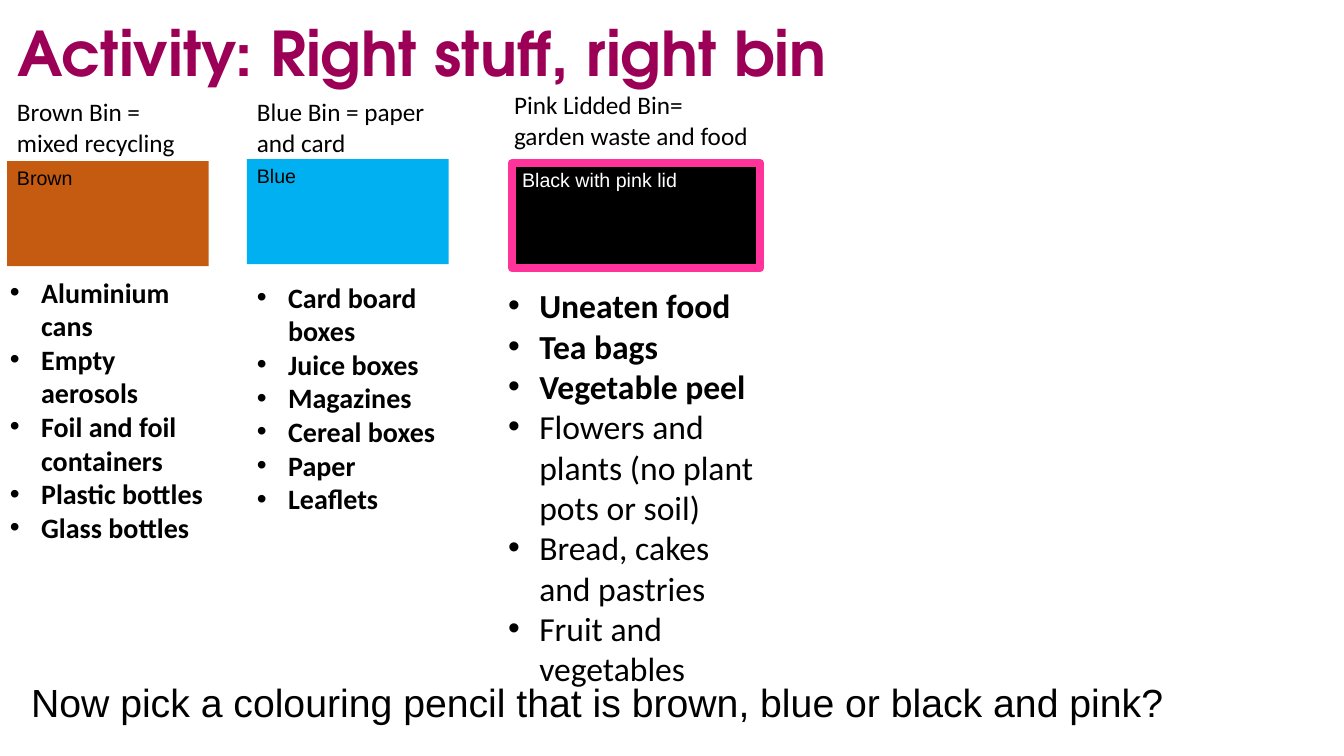
from lxml import etree
from pptx import Presentation
from pptx.dml.color import RGBColor
from pptx.enum.shapes import MSO_SHAPE
from pptx.enum.text import MSO_ANCHOR, PP_ALIGN
from pptx.oxml.ns import qn
from pptx.util import Inches, Pt

RECTANGLE = MSO_SHAPE.RECTANGLE
TOP, MIDDLE = MSO_ANCHOR.TOP, MSO_ANCHOR.MIDDLE
LEFT = PP_ALIGN.LEFT

COLOURS = {
    "title": "9B0056",
    "black": "000000",
    "white": "FFFFFF",
    "brown": "C55A11",
    "blue": "00B0F0",
    "pink": "FF3399",
}

BINS = [
    {
        "heading": ("Brown Bin = mixed recycling", (0.07, 0.91, 2, 1.01)),
        "swatch": ("Brown", (0.07, 1.6, 2, 1.04)),
        "swatch_format": {"fill": "brown"},
        "list_box": (0, 2.68, 2.14, 2.79),
        "size": 20,
        "bold_items": ["Aluminium cans", "Empty aerosols", "Foil and foil containers",
                       "Plastic bottles", "Glass bottles"],
        "plain_items": [],
    },
    {
        "heading": ("Blue Bin = paper and card", (2.45, 0.91, 2, 1.01)),
        "swatch": ("Blue", (2.45, 1.58, 2, 1.04)),
        "swatch_format": {"fill": "blue"},
        "list_box": (2.45, 2.73, 2, 2.46),
        "size": 20,
        "bold_items": ["Card board boxes", "Juice boxes", "Magazines",
                       "Cereal boxes", "Paper", "Leaflets"],
        "plain_items": [],
    },
    {
        "heading": ("Pink Lidded Bin= garden waste and food", (5, 0.84, 2.62, 1.01)),
        "swatch": ("Black with pink lid", (5.08, 1.62, 2.46, 1.04)),
        "swatch_format": {"fill": "black", "outline": "pink", "colour": "white"},
        "list_box": (4.94, 2.78, 2.75, 4.78),
        "size": 24,
        "bold_items": ["Uneaten food", "Tea bags", "Vegetable peel"],
        "plain_items": ["Flowers and plants (no plant pots or soil)",
                        "Bread, cakes and pastries", "Fruit and vegetables"],
    },
]


def colour_of(name):
    return RGBColor.from_string(COLOURS[name])


def add_bullet(paragraph):
    properties = paragraph._p.get_or_add_pPr()
    properties.set("marL", str(Inches(0.31)))
    properties.set("indent", str(Inches(-0.31)))
    etree.SubElement(properties, qn("a:buFont"), typeface="Arial")
    etree.SubElement(properties, qn("a:buChar"), char="•")


def write_text(paragraph, text, size=18, font="Calibri", colour="black", bold=False,
               bullet=False):
    if bullet:
        add_bullet(paragraph)
    paragraph.alignment = LEFT
    run = paragraph.add_run()
    run.text = text
    run.font.size = Pt(size)
    run.font.name = font
    run.font.bold = bold
    run.font.color.rgb = colour_of(colour)


def add_title(slide, text):
    title = slide.shapes.title
    title.left, title.top, title.width, title.height = map(Inches, (0.07, -0.16, 11.5, 1.45))
    title.text_frame.vertical_anchor = MIDDLE
    paragraph = title.text_frame.paragraphs[0]
    paragraph.line_spacing = 0.9
    write_text(paragraph, text, size=44, font="TeX Gyre Adventor", colour="title", bold=True)


def add_text_box(slide, box):
    frame = slide.shapes.add_textbox(*map(Inches, box)).text_frame
    frame.word_wrap = True
    return frame


def add_label(slide, text, box, **text_format):
    write_text(add_text_box(slide, box).paragraphs[0], text, **text_format)


def add_list(slide, box, size, bold_items, plain_items):
    frame = add_text_box(slide, box)
    for index, item in enumerate(bold_items + plain_items):
        paragraph = frame.add_paragraph() if index else frame.paragraphs[0]
        write_text(paragraph, item, size=size, bold=index < len(bold_items), bullet=True)


def add_swatch(slide, text, box, fill, outline=None, colour="black"):
    shape = slide.shapes.add_shape(RECTANGLE, *map(Inches, box))
    shape.shadow.inherit = False
    shape.fill.solid()
    shape.fill.fore_color.rgb = colour_of(fill)
    if outline:
        shape.line.color.rgb = colour_of(outline)
        shape.line.width = Pt(6)
        etree.SubElement(shape.line._get_or_add_ln(), qn("a:round"))
    else:
        shape.line.fill.background()
    shape.text_frame.word_wrap = True
    shape.text_frame.vertical_anchor = TOP
    write_text(shape.text_frame.paragraphs[0], text, size=14, font="Arial", colour=colour)


def main():
    presentation = Presentation()
    presentation.slide_width = Inches(13.33)
    presentation.slide_height = Inches(7.5)
    slide = presentation.slides.add_slide(presentation.slide_layouts[5])

    add_title(slide, "Activity: Right stuff, right bin")
    for waste_bin in BINS:
        add_label(slide, *waste_bin["heading"])
        add_list(slide, waste_bin["list_box"], waste_bin["size"],
                 waste_bin["bold_items"], waste_bin["plain_items"])
        add_swatch(slide, *waste_bin["swatch"], **waste_bin["swatch_format"])
    add_label(slide, "Now pick a colouring pencil that is brown, blue or black and pink?",
              (0.21, 6.68, 12.84, 0.57), size=28, font="Arial")

    presentation.save("out.pptx")


if __name__ == "__main__":
    main()
